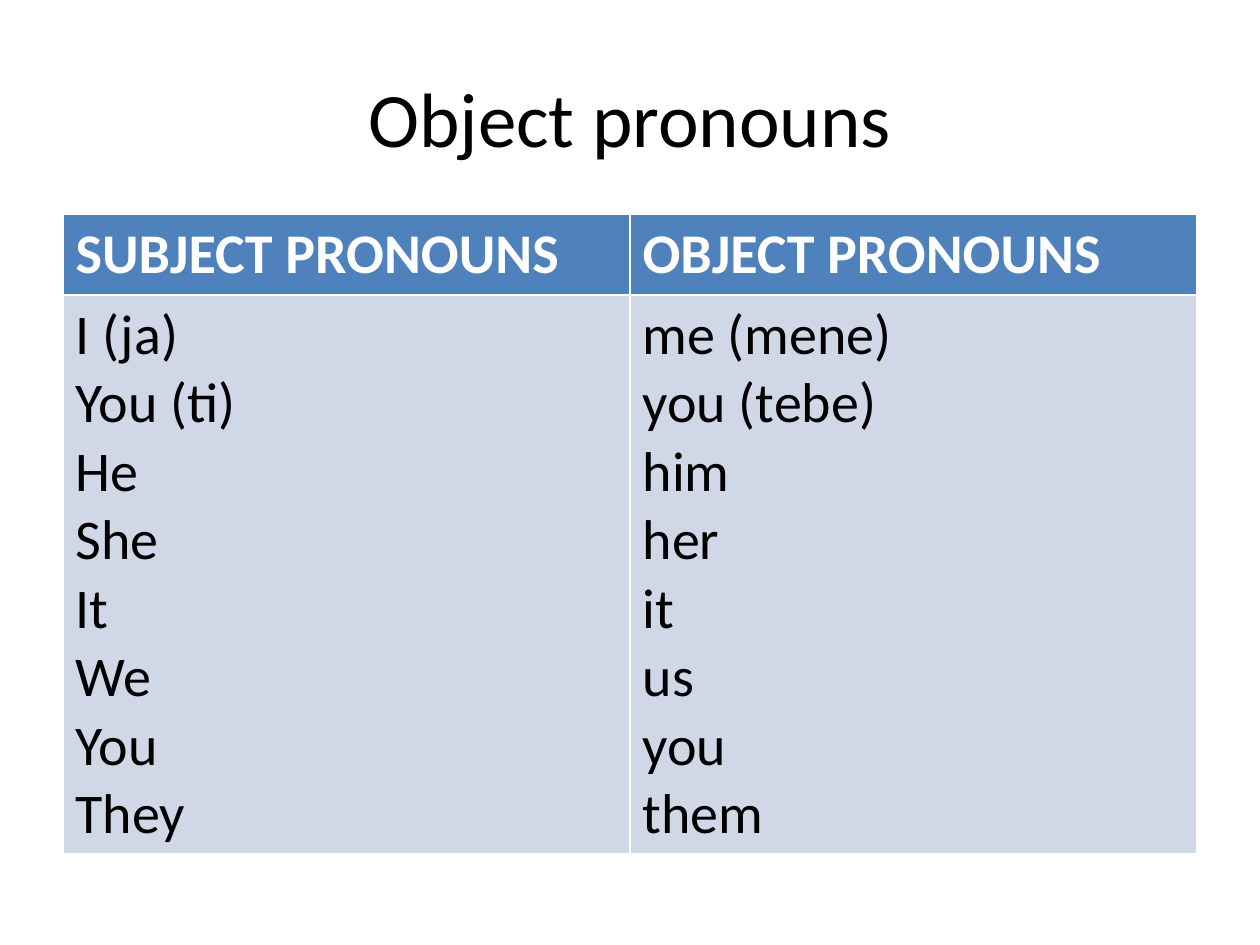
"""Build a slide with a table of subject and object pronouns."""
from pptx import Presentation, util as u
from pptx.dml.color import RGBColor
from pptx.enum import text as t

BLACK = RGBColor(0x00, 0x00, 0x00)
WHITE = RGBColor(0xFF, 0xFF, 0xFF)
HEADER_BLUE = RGBColor(0x4F, 0x81, 0xBD)
BODY_BLUE = RGBColor(0xD0, 0xD8, 0xE8)


def write(frame, lines, size=32, color=BLACK, bold=False, align=t.PP_ALIGN.LEFT):
    frame.word_wrap = True
    for index, line in enumerate(lines):
        paragraph = frame.paragraphs[0] if index == 0 else frame.add_paragraph()
        paragraph.alignment = align
        run = paragraph.add_run()
        run.text = line
        run.font.name = "Calibri"
        run.font.size = u.Pt(size)
        run.font.bold = bold
        run.font.color.rgb = color


presentation = Presentation()
presentation.slide_width = u.Inches(10)
presentation.slide_height = u.Inches(7.5)
slide = presentation.slides.add_slide(presentation.slide_layouts[6])
margin = int(presentation.slide_width * 0.05)
content_width = presentation.slide_width - 2 * margin

title = slide.shapes.add_textbox(
    margin, int(presentation.slide_height * 0.04), content_width, u.Inches(1.25)
)
title.text_frame.vertical_anchor = t.MSO_ANCHOR.MIDDLE
write(title.text_frame, ["Object pronouns"], size=44, align=t.PP_ALIGN.CENTER)

columns = {
    "SUBJECT PRONOUNS": ["I (ja)", "You (ti)", "He", "She", "It", "We", "You", "They"],
    "OBJECT PRONOUNS": ["me (mene)", "you (tebe)", "him", "her", "it", "us", "you", "them"],
}
header_height, body_height = u.Inches(0.64), u.Inches(4.44)
table = slide.shapes.add_table(
    2, len(columns), margin, u.Inches(1.7), content_width, header_height + body_height
).table
table.rows[0].height = header_height
table.rows[1].height = body_height

for column, (heading, pronouns) in enumerate(columns.items()):
    header, body = table.cell(0, column), table.cell(1, column)
    for cell, fill in ((header, HEADER_BLUE), (body, BODY_BLUE)):
        cell.fill.solid()
        cell.fill.fore_color.rgb = fill
    write(header.text_frame, [heading], color=WHITE, bold=True)
    write(body.text_frame, pronouns)

presentation.save("out.pptx")
